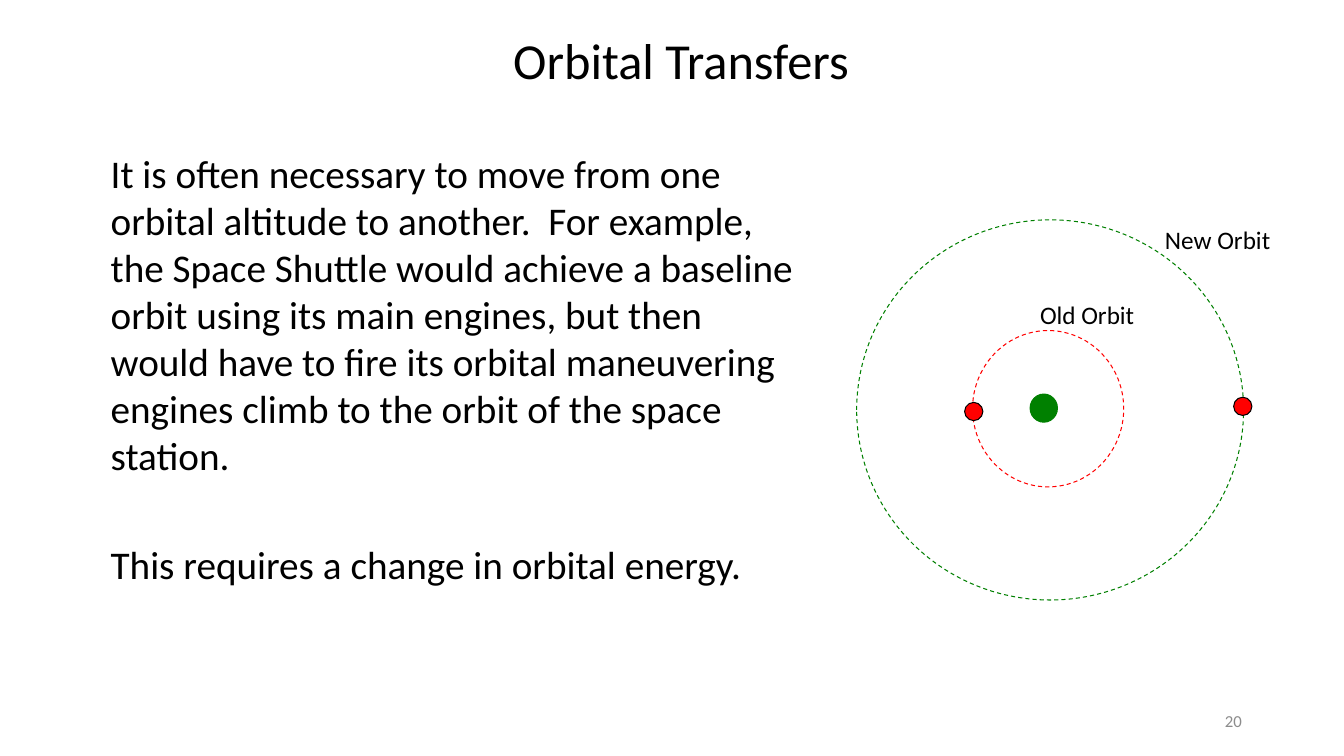
from pptx import Presentation
from pptx.dml.color import RGBColor
from pptx.enum import dml, shapes, text
from pptx.util import Cm, Pt

BLACK = RGBColor(0, 0, 0)
WHITE = RGBColor(255, 255, 255)
RED = RGBColor(255, 0, 0)
GREEN = RGBColor(0, 128, 0)
GREY = RGBColor(140, 140, 140)

NECESSITY = (
    "It is often necessary to move from one orbital altitude to another.  "
    "For example, the Space Shuttle would achieve a baseline orbit using its "
    "main engines, but then would have to fire its orbital maneuvering "
    "engines climb to the orbit of the space station."
)
CONCLUSION = "This requires a change in orbital energy."


def write(box, words, size, color=BLACK, align=text.PP_ALIGN.LEFT,
          anchor=text.MSO_ANCHOR.TOP):
    """Fill a shape with one formatted paragraph."""
    frame = box.text_frame
    frame.text = words
    frame.word_wrap = True
    frame.auto_size = text.MSO_AUTO_SIZE.NONE
    frame.vertical_anchor = anchor
    para = frame.paragraphs[0]
    para.alignment = align
    font = para.runs[0].font
    font.name, font.size, font.color.rgb = "Calibri", Pt(size), color


def add_text(page, left, top, width, height, words, size, **style):
    """Add a text box, measured in centimetres."""
    box = page.shapes.add_textbox(Cm(left), Cm(top), Cm(width), Cm(height))
    write(box, words, size, **style)


def add_ellipse(page, left, top, width, height, line, fill=None, dashed=False):
    """Add an outlined ellipse, measured in centimetres."""
    ellipse = page.shapes.add_shape(
        shapes.MSO_SHAPE.OVAL, Cm(left), Cm(top), Cm(width), Cm(height))
    ellipse.shadow.inherit = False
    ellipse.line.color.rgb = line
    ellipse.line.width = Pt(0.75)
    if dashed:
        ellipse.line.dash_style = dml.MSO_LINE.DASH
    if fill is None:
        ellipse.fill.background()
    else:
        ellipse.fill.solid()
        ellipse.fill.fore_color.rgb = fill


def place_title(page, left, top, width, height):
    """Move and format the title placeholder."""
    title = page.shapes.title
    title.left, title.top = Cm(left), Cm(top)
    title.width, title.height = Cm(width), Cm(height)
    write(title, "Orbital Transfers", 36, align=text.PP_ALIGN.CENTER)


def draw_explanation(page, left, top, width):
    """Write the two statements below each other."""
    add_text(page, left, top, width, 8.64, NECESSITY, 28)
    add_text(page, left, top + 9.86, width, 1.45, CONCLUSION, 28)


def draw_orbits(page, left, top, width, height):
    """Draw the planet, both orbits, their satellites and labels."""
    add_ellipse(page, left + 2.92, top + 2.79, 3.81, 3.94, RED, WHITE, dashed=True)
    add_ellipse(page, left, top, width, height, GREEN, dashed=True)
    for across, down in ((2.72, 4.6), (9.5, 4.47)):
        add_ellipse(page, left + across, top + down, 0.46, 0.46, BLACK, RED)
    add_ellipse(page, left + 4.37, top + 4.39, 0.69, 0.71, GREEN, GREEN)
    for words, across, down in (("New Orbit", 7.52, 0), ("Old Orbit", 4.37, 1.88)):
        add_text(page, left + across, top + down, 4, 1.02, words, 18)


def draw_page_number(page, left, top, width, height):
    """Write the page number at the right of its box."""
    add_text(page, left, top, width, height, "20", 12, color=GREY,
             align=text.PP_ALIGN.RIGHT, anchor=text.MSO_ANCHOR.MIDDLE)


def main():
    """Build and save the deck."""
    deck = Presentation()
    deck.slide_width, deck.slide_height = Cm(33.87), Cm(19.05)
    page = deck.slides.add_slide(deck.slide_layouts[5])
    draw_orbits(page, 21.59, 5.54, 9.75, 9.58)
    draw_page_number(page, 23.93, 17.65, 7.62, 1.02)
    place_title(page, 7.26, 0.61, 19.81, 1.8)
    draw_explanation(page, 2.54, 3.63, 17.73)
    deck.save("out.pptx")


if __name__ == "__main__":
    main()
